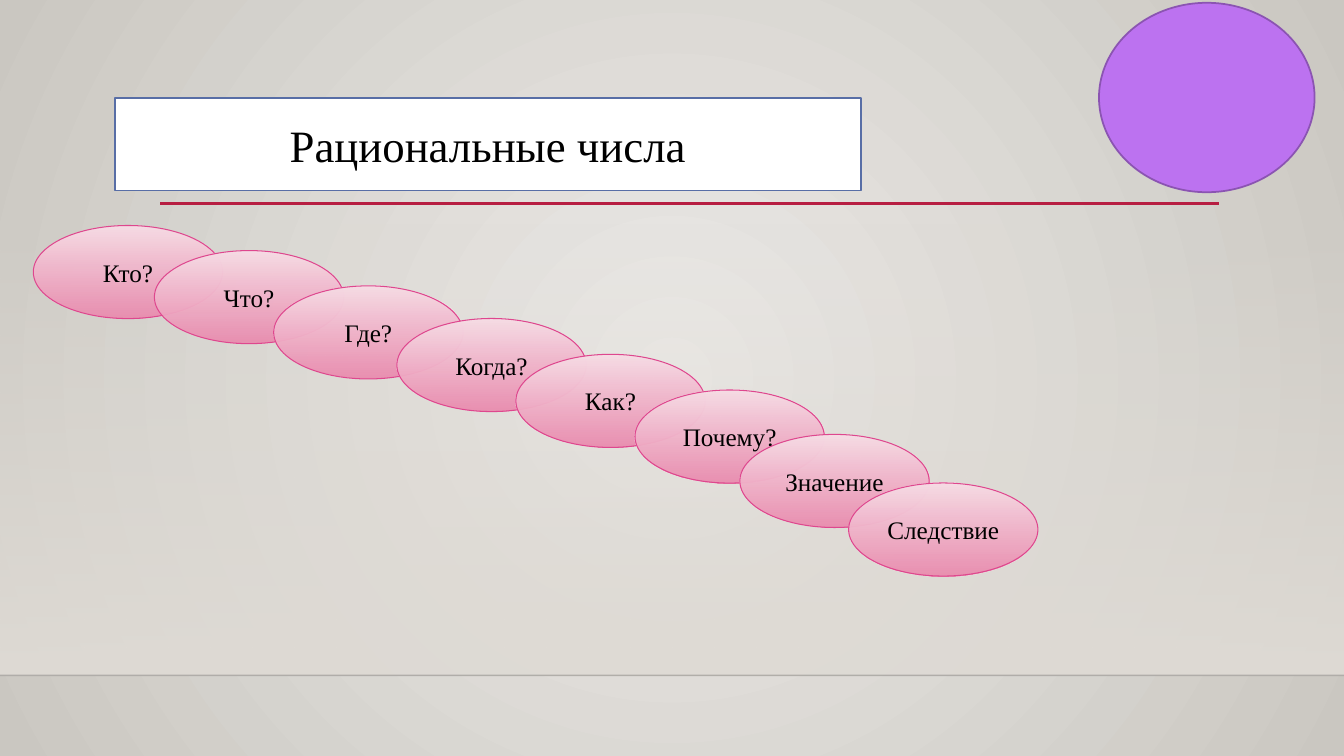
"""Builds the slide on rational numbers with a cascade of question ovals."""
from lxml import etree
from pptx import Presentation
from pptx.dml.color import RGBColor
from pptx.enum.shapes import MSO_CONNECTOR, MSO_SHAPE
from pptx.enum.text import MSO_ANCHOR, MSO_AUTO_SIZE, PP_ALIGN
from pptx.oxml.ns import qn
from pptx.util import Pt

STRAIGHT = MSO_CONNECTOR.STRAIGHT
RECTANGLE, OVAL = MSO_SHAPE.RECTANGLE, MSO_SHAPE.OVAL
MIDDLE, CENTER, NO_FIT = MSO_ANCHOR.MIDDLE, PP_ALIGN.CENTER, MSO_AUTO_SIZE.NONE

FONT = "Times New Roman"
BLACK = RGBColor(0x00, 0x00, 0x00)
WHITE = RGBColor(0xFF, 0xFF, 0xFF)
FLOOR_LINE = RGBColor(0x00, 0x00, 0x01)
WALL_LIGHT = RGBColor(0xEC, 0xEA, 0xE7)
WALL_DARK = RGBColor(0xCA, 0xC7, 0xC1)
HAZE = RGBColor(0xDF, 0xDB, 0xD5)
CRIMSON = RGBColor(0xB7, 0x1E, 0x42)
BLUE = RGBColor(0x58, 0x6E, 0xA6)
PINK_LIGHT = RGBColor(0xF7, 0xDC, 0xE5)
PINK_DARK = RGBColor(0xEA, 0x8A, 0xAE)
PINK_LINE = RGBColor(0xDE, 0x47, 0x8E)
VIOLET = RGBColor(0xBC, 0x72, 0xF0)
VIOLET_LINE = RGBColor(0x8B, 0x54, 0xB2)

QUESTIONS = [
    ("Кто?", 23.8, 161.1),
    ("Что?", 110.3, 179),
    ("Где?", 195.5, 204.2),
    ("Когда?", 283.5, 227.5),
    ("Как?", 368.5, 253.1),
    ("Почему?", 453.6, 278.6),
    ("Значение", 528.5, 310.3),
    ("Следствие", 606.2, 345),
]


def set_opacity(color_element, percent):
    """Set the opacity of an a:srgbClr element."""
    alpha = etree.SubElement(color_element, qn("a:alpha"))
    alpha.set("val", str(percent * 1000))


def set_gradient(fill, colors):
    """Give a fill a two-stop gradient running downwards."""
    fill.gradient()
    fill.gradient_angle = 270
    for stop, color in zip(fill.gradient_stops, colors):
        stop.color.rgb = color


def set_line(line, color, width):
    """Set the colour and width of an outline."""
    line.color.rgb = color
    line.width = Pt(width)


def set_text(shape, text, size):
    """Write one centred line of text in a shape."""
    frame = shape.text_frame
    frame.text = text
    frame.word_wrap = True
    frame.auto_size = NO_FIT
    frame.vertical_anchor = MIDDLE
    para = frame.paragraphs[0]
    para.alignment = CENTER
    para.font.name = FONT
    para.font.size = Pt(size)
    para.font.color.rgb = BLACK


def add_shape(page, kind, left, top, width, height):
    """Add a preset shape without a shadow."""
    shape = page.shapes.add_shape(kind, Pt(left), Pt(top), Pt(width), Pt(height))
    shape.shadow.inherit = False
    return shape


def add_rule(page, left, right, top, color, width):
    """Add a horizontal line."""
    rule = page.shapes.add_connector(STRAIGHT, Pt(left), Pt(top), Pt(right), Pt(top))
    set_line(rule.line, color, width)
    etree.SubElement(rule._element.spPr, qn("a:effectLst"))
    return rule


def paint_background(page):
    """Fill the page with a gradient that spreads from its centre."""
    set_gradient(page.background.fill, (WALL_LIGHT, WALL_DARK))
    gradient = page._element.find(".//" + qn("a:gradFill"))
    gradient.remove(gradient.find(qn("a:lin")))
    circle = etree.SubElement(gradient, qn("a:path"), {"path": "circle"})
    sides = dict.fromkeys("ltrb", "50000")
    etree.SubElement(circle, qn("a:fillToRect"), sides)


def add_haze(page):
    """Add the band that fades in towards the floor line."""
    haze = add_shape(page, RECTANGLE, 0, 159.1, 960, 323.3)
    set_gradient(haze.fill, (HAZE, HAZE))
    haze.line.fill.background()
    set_opacity(haze._element.spPr.find(".//" + qn("a:srgbClr")), 0)


def format_title(page):
    """Place the title in a rounded white frame."""
    title = page.shapes.title
    title.left, title.top, title.width, title.height = map(Pt, (82.1, 69.8, 532.8, 66.4))
    outline = etree.Element(qn("a:prstGeom"), {"prst": "roundRect"})
    etree.SubElement(outline, qn("a:avLst"))
    title._element.spPr.insert(1, outline)
    title.fill.solid()
    title.fill.fore_color.rgb = WHITE
    set_line(title.line, BLUE, 1.25)
    set_text(title, "Рациональные числа", 32)


def add_question(page, text, left, top):
    """Add one pink oval with its question."""
    oval = add_shape(page, OVAL, left, top, 135.2, 66.5)
    set_gradient(oval.fill, (PINK_LIGHT, PINK_DARK))
    set_opacity(oval._element.spPr.findall(".//" + qn("a:srgbClr"))[-1], 92)
    set_line(oval.line, PINK_LINE, 0.75)
    set_text(oval, text, 18)


def add_violet_circle(page):
    """Add the empty violet circle in the corner."""
    circle = add_shape(page, OVAL, 785, 2, 154, 135.3)
    circle.fill.solid()
    circle.fill.fore_color.rgb = VIOLET
    set_line(circle.line, VIOLET_LINE, 1.25)


def main():
    """Build and save the deck."""
    deck = Presentation()
    deck.slide_width, deck.slide_height = Pt(960), Pt(540)
    page = deck.slides.add_slide(deck.slide_layouts[5])
    paint_background(page)
    add_haze(page)
    floor = add_rule(page, 0, 960, 482.4, FLOOR_LINE, 1)
    set_opacity(floor._element.spPr.find(".//" + qn("a:srgbClr")), 20)
    add_rule(page, 114.4, 871, 145.3, CRIMSON, 2.5)
    format_title(page)
    for text, left, top in QUESTIONS:
        add_question(page, text, left, top)
    add_violet_circle(page)
    deck.save("out.pptx")


if __name__ == "__main__":
    main()
